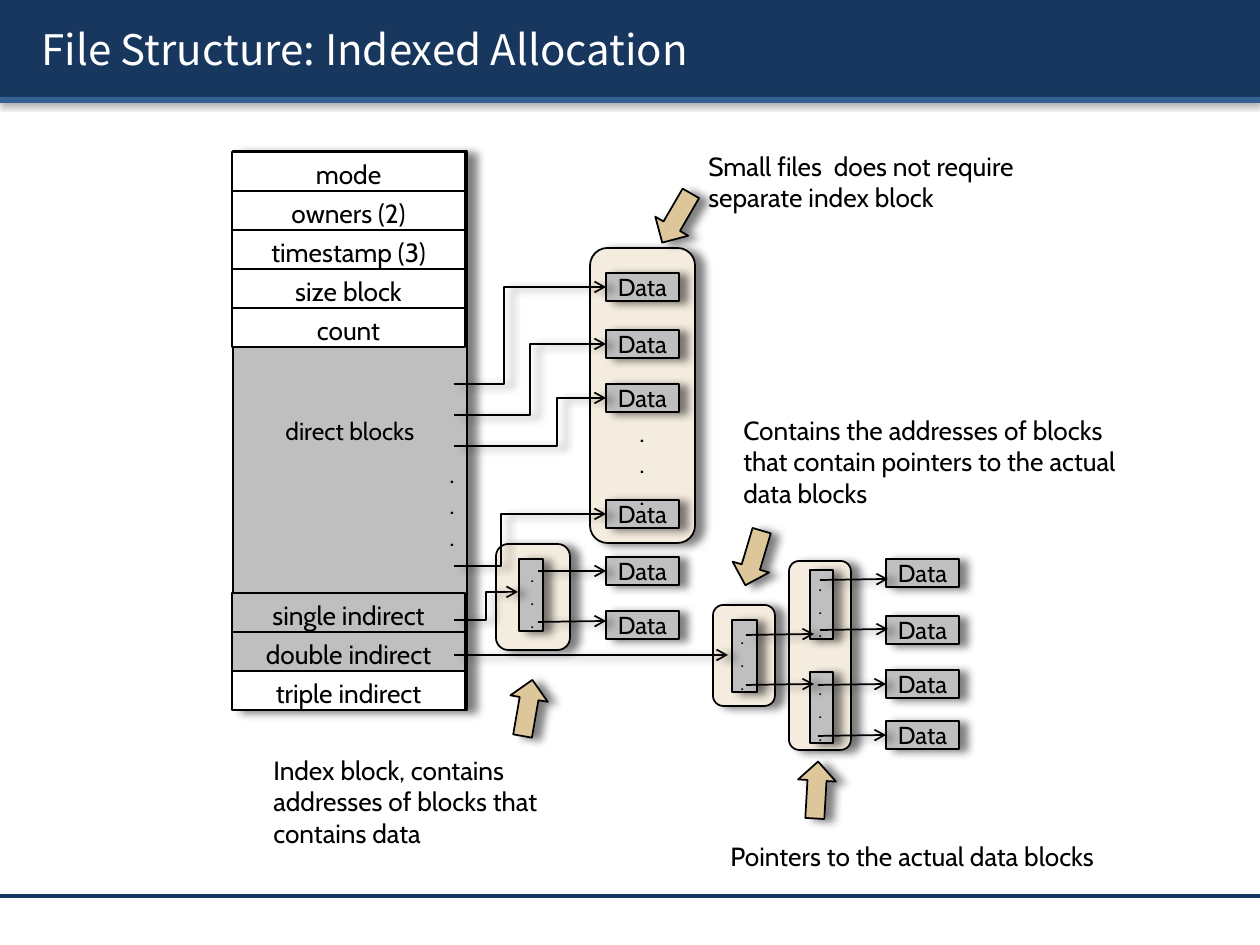
from lxml.etree import SubElement
from pptx import Presentation
from pptx.dml.color import RGBColor
from pptx.enum.shapes import MSO_CONNECTOR, MSO_SHAPE
from pptx.enum.text import MSO_ANCHOR, MSO_AUTO_SIZE, PP_ALIGN
from pptx.oxml.ns import qn
from pptx.util import Emu, Pt

COLORS = {
    "navy": "17375E", "blue": "376092", "white": "FFFFFF", "black": "000000",
    "gray": "BFBFBF", "cream": "F4ECDE", "tan": "DEC69B",
}
SCALE = 914400 / 126
SOFT = (5, 5, 15, 50)
BAR = (3.1, 1.6, 90, 38)
ROW_H = 39


def px(*values):
    return [Emu(round(v * SCALE)) for v in values]


def rgb(name):
    return RGBColor.from_string(COLORS[name])


def add_effect(parent, shadow):
    effects = parent.find(qn("a:effectLst"))
    if effects is None:
        effects = SubElement(parent, qn("a:effectLst"))
    if shadow:
        blur, dist, angle, alpha = shadow
        outer = SubElement(effects, qn("a:outerShdw"), blurRad=str(Pt(blur)),
                           dist=str(Pt(dist)), dir=str(angle * 60000),
                           algn="tl", rotWithShape="0")
        clr = SubElement(outer, qn("a:srgbClr"), val=COLORS["black"])
        SubElement(clr, qn("a:alpha"), val=str(alpha * 1000))


def write(sp, lines, size, align=PP_ALIGN.LEFT, font="Cabin", color="black", **frame):
    tf = sp.text_frame
    options = {"auto_size": MSO_AUTO_SIZE.NONE, "word_wrap": True,
               "vertical_anchor": MSO_ANCHOR.TOP, **frame}
    for name, value in options.items():
        setattr(tf, name, value)
    for i, line in enumerate(lines):
        p = tf.add_paragraph() if i else tf.paragraphs[0]
        p.alignment = align
        r = p.add_run()
        r.text = line
        for name, value in {"name": font, "size": Pt(size)}.items():
            setattr(r.font, name, value)
        r.font.color.rgb = rgb(color)


def add_box(s, kind, box, fill, width=1, shadow=SOFT):
    sp = s.shapes.add_shape(kind, *px(*box))
    sp.shadow.inherit = False
    sp.fill.solid()
    sp.fill.fore_color.rgb = rgb(fill)
    if width:
        sp.line.color.rgb = rgb("black")
        sp.line.width = Pt(width)
    else:
        sp.line.fill.background()
    add_effect(sp._element.spPr, shadow)
    return sp


def add_text(s, box, lines, size=15, **frame):
    write(s.shapes.add_textbox(*px(*box)), lines, size, **frame)


def add_dots(s, x, y, size=11):
    add_text(s, (x, y, 29, 73 if size == 11 else 95), ["."] * 3, size)


def add_row(s, y, label, fill):
    sp = add_box(s, MSO_SHAPE.RECTANGLE, (232, y, 233, ROW_H), fill, 0.75, None)
    write(sp, [label], 15, PP_ALIGN.CENTER, margin_bottom=0)


def add_data(s, x, y):
    sp = add_box(s, MSO_SHAPE.RECTANGLE, (x, y, 73, 28), "gray")
    write(sp, ["Data"], 14, PP_ALIGN.CENTER, vertical_anchor=MSO_ANCHOR.MIDDLE,
          word_wrap=False, margin_left=0, margin_right=0, margin_top=0, margin_bottom=0)
    return sp


def add_index(s, x, y, w, h, dots_x, dots_y):
    add_box(s, MSO_SHAPE.RECTANGLE, (x, y, w, h), "gray")
    add_dots(s, dots_x, dots_y)


def add_line(s, points, color="black", width=1, bend=None, target=None, arrow=True):
    kind = MSO_CONNECTOR.STRAIGHT if bend is None else MSO_CONNECTOR.ELBOW
    line = s.shapes.add_connector(kind, *px(*points))
    line.line.color.rgb = rgb(color)
    line.line.width = Pt(width)
    if bend is not None:
        guides = line._element.spPr.find(qn("a:prstGeom")).get_or_add_avLst()
        SubElement(guides, qn("a:gd"), name="adj1", fmla=f"val {round(bend * 100000)}")
    if target is not None:
        line.end_connect(target, 1)
    if arrow:
        SubElement(line.line._get_or_add_ln(), qn("a:tailEnd"), type="arrow")
    add_effect(line._element.spPr, SOFT if arrow else None)


def add_callout(s, box, text, x, y, angle):
    add_text(s, box, [text])
    add_box(s, MSO_SHAPE.RIGHT_ARROW, (x, y, 57, 38), "tan").rotation = angle


def add_header(s):
    add_box(s, MSO_SHAPE.RECTANGLE, (0, 0, 1260, 97), "navy", 0, BAR)
    add_box(s, MSO_SHAPE.RECTANGLE, (0, 97, 1260, 6), "blue", 0, BAR)
    add_line(s, (0, 896, 1260, 896), "navy", 2, arrow=False)
    title = s.shapes.title
    title.left, title.top, title.width, title.height = px(29, 8, 1211, 81)
    write(title, ["File Structure: Indexed Allocation"], 24, font="Noto Sans CJK KR",
          color="white", vertical_anchor=MSO_ANCHOR.MIDDLE)
    add_effect(title.text_frame.paragraphs[0].runs[0].font._element, None)
    rPr = title.text_frame.paragraphs[0].runs[0].font._element
    effects = rPr.find(qn("a:effectLst"))
    rPr.find(qn("a:solidFill")).addnext(effects)
    add_effect(rPr, (3, 3, 45, 100))
    s.shapes._spTree.append(title._element)


def add_inode(s):
    sp = add_box(s, MSO_SHAPE.RECTANGLE, (233, 151, 234, 559), "gray")
    write(sp, ["direct blocks"], 14, PP_ALIGN.CENTER,
          vertical_anchor=MSO_ANCHOR.MIDDLE, word_wrap=False)
    fields = ["mode", "owners (2)", "timestamp (3)", "size block", "count"]
    for i, label in enumerate(fields):
        add_row(s, 152 + i * ROW_H, label, "white")
    for i, level in enumerate(["single", "double", "triple"]):
        add_row(s, 593 + i * ROW_H, f"{level} indirect", "white" if i == 2 else "gray")
    add_dots(s, 437, 451, 15)


def main():
    prs = Presentation()
    prs.slide_width, prs.slide_height = px(1260, 945)
    s = prs.slides.add_slide(prs.slide_layouts[5])
    add_header(s)
    for box in [(713, 605, 62, 101), (789, 561, 62, 189),
                (496, 544, 74, 106), (590, 248, 105, 295)]:
        add_box(s, MSO_SHAPE.ROUNDED_RECTANGLE, box, "cream")
    add_inode(s)
    near = [add_data(s, 606, y) for y in (273, 330, 384, 500, 557, 611)]
    far = [add_data(s, 886, y) for y in (559, 616, 670, 721)]
    for index in [(519, 559, 24, 72, 518, 557), (810, 570, 23, 69, 806, 566),
                  (810, 672, 23, 71, 806, 670), (732, 620, 25, 72, 728, 619)]:
        add_index(s, *index)
    for points, bend in [((454, 384, 606, 287), 0.33), ((454, 415, 606, 344), 0.5),
                         ((454, 446, 606, 398), 0.68), ((454, 566, 606, 514), 0.31),
                         ((454, 620, 518, 592), 0.5)]:
        add_line(s, points, bend=bend)
    for points, target in [
            ((538, 571, 606, 571), near[4]), ((538, 622, 606, 621), None),
            ((454, 655, 728, 655), None), ((746, 635, 814, 634), None),
            ((746, 685, 814, 684), None), ((820, 580, 888, 579), None),
            ((820, 630, 888, 629), None), ((818, 685, 886, 684), far[2]),
            ((818, 736, 886, 735), far[3])]:
        add_line(s, points, target=target)
    add_dots(s, 627, 410, 15)
    for callout in [
            ((696, 144, 393, 77), "Small files  does not require separate index block",
             648, 199, 120.1),
            ((261, 748, 316, 108),
             "Index block, contains addresses of blocks that contains data", 499, 689, 279.9),
            ((731, 408, 417, 108),
             "Contains the addresses of blocks that contain pointers to the actual data blocks",
             725, 539, 106.6),
            ((718, 834, 467, 44), "Pointers to the actual data blocks", 788, 771, 273.3)]:
        add_callout(s, *callout)
    prs.save("out.pptx")


if __name__ == "__main__":
    main()
